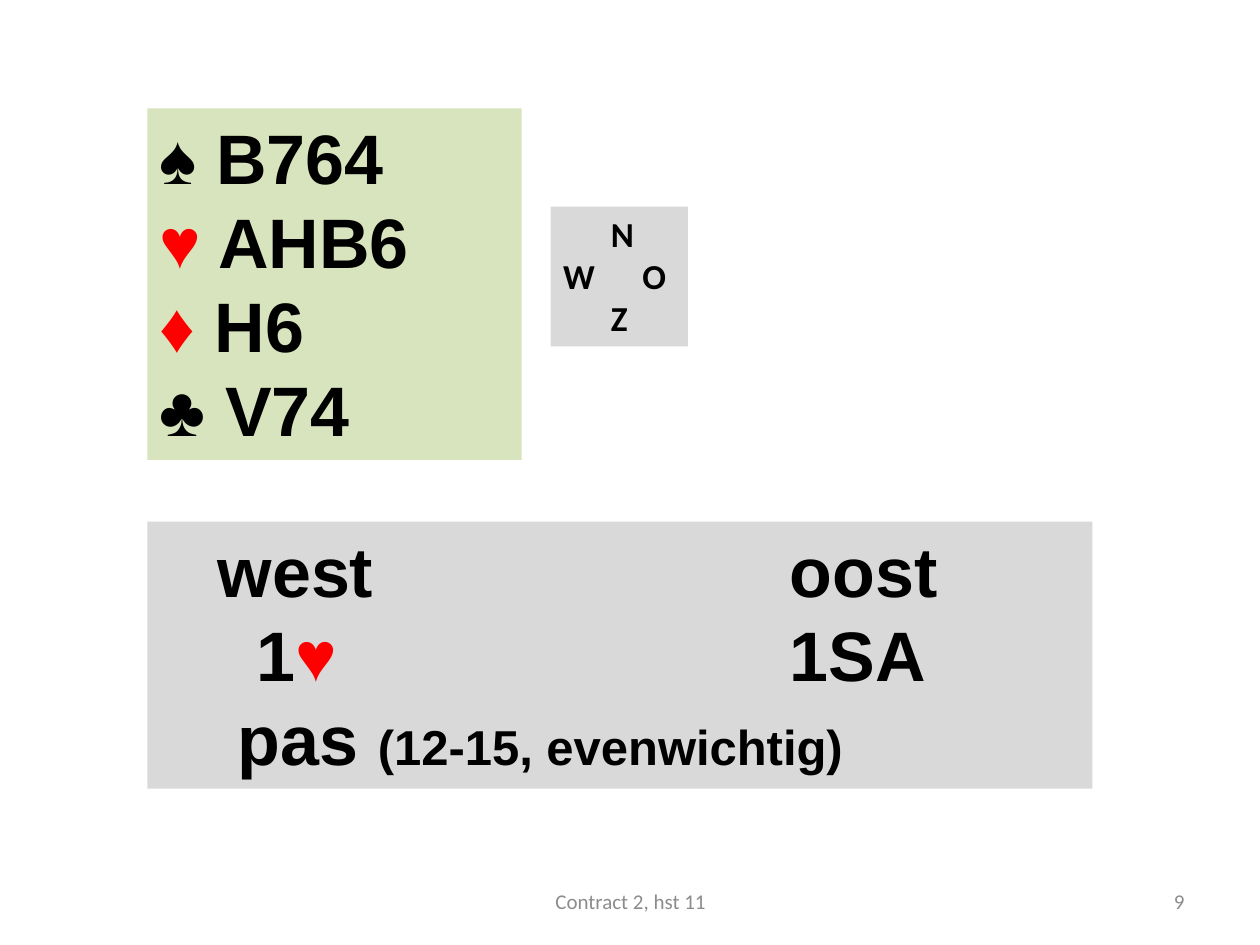
from itertools import groupby

from lxml.etree import SubElement
from pptx import Presentation
from pptx.dml.color import RGBColor
from pptx.enum.shapes import MSO_SHAPE
from pptx.enum.text import MSO_ANCHOR, PP_ALIGN
from pptx.oxml.ns import qn
from pptx.util import Inches, Pt

THEME = {
    "hand": "D7E4BD", "panel": "D9D9D9",
    "ink": "000000", "red suit": "FF0000", "muted": "8C8C8C",
    "cards": 40, "remark": 28, "compass": 20, "footer": 12,
    "card font": "Arial", "small font": "Calibri",
}
RED_SUITS = "♥♦"

deck = Presentation()
deck.slide_width, deck.slide_height = Inches(10), Inches(7.5)
slide = deck.slides.add_slide(deck.slide_layouts[6])

# Shared edges, in inches
left_edge = 1.17
footer_top, footer_height = 6.95, 0.4


def add_text(lines, place, *, size, font, fill=None, color="ink", bold=True,
             align=PP_ALIGN.LEFT, anchor=MSO_ANCHOR.TOP, remark=""):
    """Add a panel of lines; each line is (text, tab stops in inches).

    Red suit symbols get their own colour, and the remark ends the last line.
    """
    box = [Inches(length) for length in place]
    if fill:
        panel = slide.shapes.add_shape(MSO_SHAPE.RECTANGLE, *box)
        panel.shadow.inherit = False
        panel.fill.solid()
        panel.fill.fore_color.rgb = RGBColor.from_string(THEME[fill])
        panel.line.fill.background()
    else:
        panel = slide.shapes.add_textbox(*box)
    frame = panel.text_frame
    frame.word_wrap = True
    frame.vertical_anchor = anchor

    for number, (text, stops) in enumerate(lines):
        paragraph = frame.paragraphs[0] if number == 0 else frame.add_paragraph()
        paragraph.alignment = align
        if stops:
            tab_list = SubElement(paragraph._p.get_or_add_pPr(), qn("a:tabLst"))
            for stop in stops:
                SubElement(tab_list, qn("a:tab"), pos=str(Inches(stop)), algn="l")
        pieces = [("".join(letters), size, "red suit" if is_red else color)
                  for is_red, letters in groupby(text, lambda letter: letter in RED_SUITS)]
        if remark and number == len(lines) - 1:
            pieces.append((remark, "remark", color))
        for words, piece_size, piece_color in pieces:
            run = paragraph.add_run()
            run.text = words
            run.font.name = THEME[font]
            run.font.size = Pt(THEME[piece_size])
            run.font.bold = bold
            run.font.color.rgb = RGBColor.from_string(THEME[piece_color])


hand = ["♠ B764", "♥ AHB6", "♦ H6", "♣ V74"]
add_text([(suit, ()) for suit in hand], (left_edge, 0.86, 2.97, 2.79),
         size="cards", font="card font", fill="hand")

compass = [("\tN", (0.38,)), ("W\tO", (0.63,)), ("\tZ", (0.38,))]
add_text(compass, (4.37, 1.64, 1.09, 1.11),
         size="compass", font="small font", fill="panel")

east_column = 5
bidding = [
    ("\twest\toost", (0.46, east_column)),
    ("\t1♥\t1SA", (0.77, east_column)),
    ("\tpas ", (0.62,)),
]
add_text(bidding, (left_edge, 4.14, 7.5, 2.12), size="cards", font="card font",
         fill="panel", remark="(12-15, evenwichtig)")

for footer, left, width, align in [
    ("9", 7.17, 2.33, PP_ALIGN.RIGHT),
    ("Contract 2, hst 11", 3.42, 3.17, PP_ALIGN.CENTER),
]:
    add_text([(footer, ())], (left, footer_top, width, footer_height),
             size="footer", font="small font", color="muted", bold=False,
             align=align, anchor=MSO_ANCHOR.MIDDLE)

deck.save("out.pptx")
